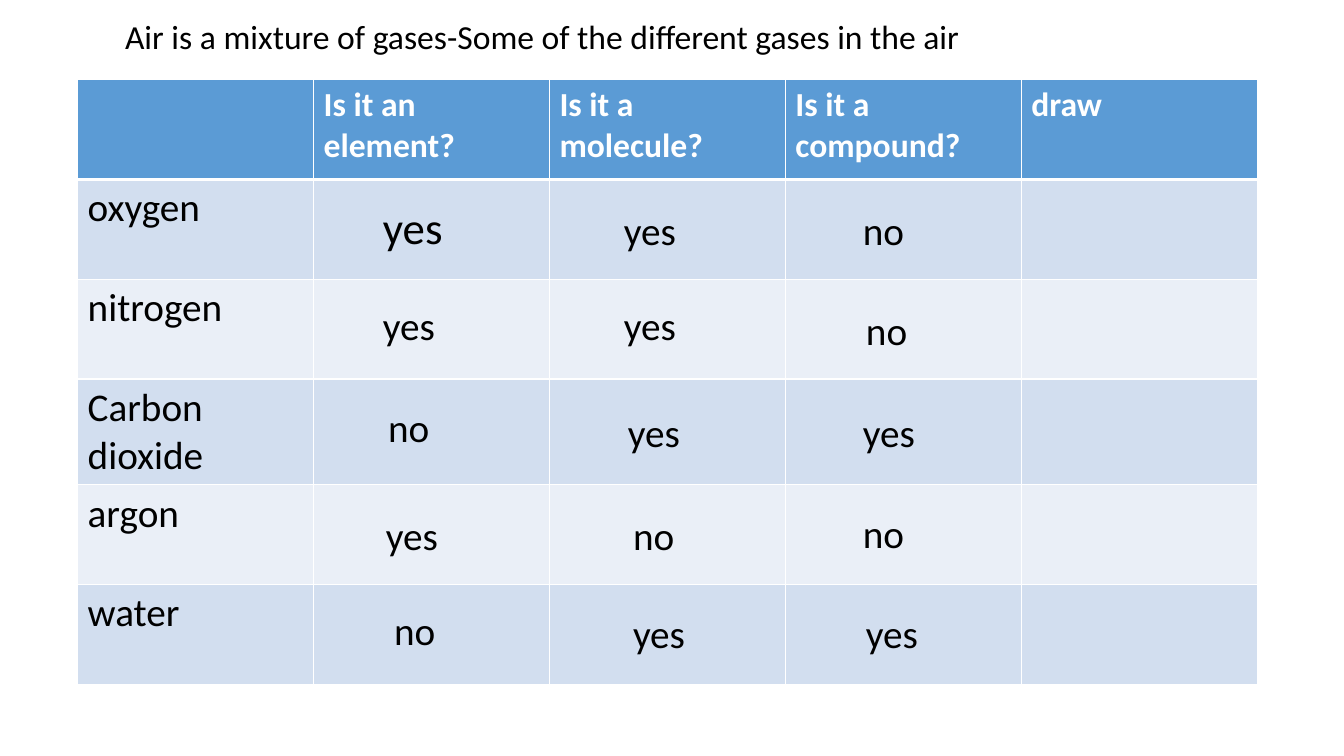
from pptx import Presentation
from pptx.dml.color import RGBColor
from pptx.enum.text import MSO_ANCHOR, MSO_AUTO_SIZE, PP_ALIGN
from pptx.oxml import parse_xml
from pptx.oxml.ns import nsdecls
from pptx.util import Emu, Pt

HEADS = ["", "Is it an element?", "Is it a molecule?", "Is it a compound?", "draw"]
GASES = ["oxygen", "nitrogen", "Carbon dioxide", "argon", "water"]
ANSWERS = [
    ("yes", 293, 114, 32), ("yes", 532, 121, 28), ("no", 769, 121, 28),
    ("yes", 293, 215, 28), ("yes", 532, 215, 28), ("no", 772, 220, 28),
    ("no", 298, 316, 28), ("yes", 536, 321, 28), ("yes", 769, 321, 28),
    ("yes", 296, 423, 28), ("no", 541, 423, 28), ("no", 769, 421, 28),
    ("no", 304, 518, 28), ("yes", 541, 521, 28), ("yes", 772, 521, 28),
]


def px(n):
    return Emu(n * 9144)


def color(code):
    return RGBColor.from_string(code)


def style(frame, text, size, code="000000", bold=False):
    frame.text = text
    para = frame.paragraphs[0]
    para.alignment = PP_ALIGN.LEFT
    font = para.font
    font.name, font.size, font.bold = "Calibri", Pt(size), bold
    font.color.rgb = color(code)


def border(cell, top, base):
    props = cell._tc.get_or_add_tcPr()
    for side, width in (("L", 1), ("R", 1), ("T", top), ("B", base)):
        props.append(parse_xml(
            f'<a:ln{side} {nsdecls("a")} w="{Pt(width)}"><a:solidFill>'
            f'<a:srgbClr val="FFFFFF"/></a:solidFill></a:ln{side}>'))


def add_title(slide, left, top, width, height):
    title = slide.shapes.title
    title.left, title.top = px(left), px(top)
    title.width, title.height = px(width), px(height)
    frame = title.text_frame
    frame.auto_size = MSO_AUTO_SIZE.NONE
    frame.vertical_anchor = MSO_ANCHOR.TOP
    frame.word_wrap = True
    style(frame, "Air is a mixture of gases-Some of the different gases in the air", 24)


def add_grid(slide, left, top, width, height):
    rows = [HEADS] + [[gas] + [""] * 4 for gas in GASES]
    grid = slide.shapes.add_table(
        len(rows), len(HEADS), px(left), px(top), px(width), px(height)).table
    for col in grid.columns:
        col.width = px(width // len(HEADS))
    for r, row in enumerate(rows):
        grid.rows[r].height = px(height // len(rows))
        for c, text in enumerate(row):
            cell = grid.cell(r, c)
            border(cell, 3 if r == 1 else 1, 3 if r == 0 else 1)
            cell.fill.solid()
            if r == 0:
                shade = "5B9BD5"
            else:
                shade = "D2DEEF" if r % 2 else "EAEFF7"
            cell.fill.fore_color.rgb = color(shade)
            if text and r == 0:
                style(cell.text_frame, text, 24, "FFFFFF", True)
            elif text:
                style(cell.text_frame, text, 28)


def add_answers(slide, left, top):
    for word, x, y, size in ANSWERS:
        width = (72 if word == "yes" else 62) * size // 28
        box = slide.shapes.add_textbox(
            px(left + x), px(top + y), px(width), px(size * 2 + 1))
        box.text_frame.word_wrap = False
        style(box.text_frame, word, size)


def main():
    deck = Presentation()
    deck.slide_width, deck.slide_height = px(1333), px(750)
    slide = deck.slides.add_slide(deck.slide_layouts[5])
    add_title(slide, 114, 11, 946, 50)
    add_grid(slide, 77, 79, 1172, 594)
    add_answers(slide, 77, 79)
    deck.save("out.pptx")


if __name__ == "__main__":
    main()
